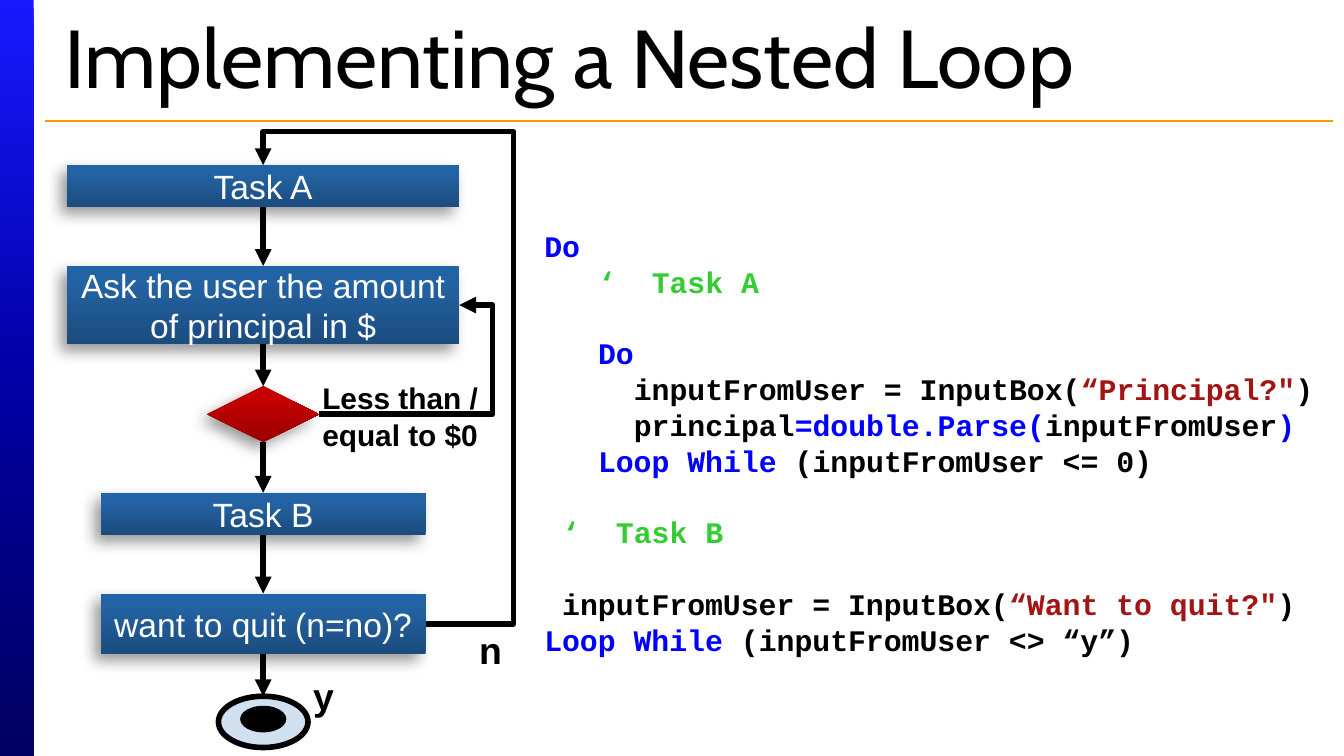
"""Build a slide that pairs a nested loop flowchart with its code."""
from dataclasses import dataclass

from lxml.etree import SubElement
from pptx import Presentation
from pptx.dml.color import RGBColor
from pptx.enum.shapes import MSO_CONNECTOR, MSO_SHAPE
from pptx.enum.text import MSO_ANCHOR, PP_ALIGN
from pptx.oxml import parse_xml
from pptx.oxml.ns import nsdecls, qn
from pptx.util import Pt


@dataclass(frozen=True)
class Theme:
    black: str = "000000"
    white: str = "FFFFFF"
    rule: str = "FF9900"
    pale: str = "D1E0F0"
    keyword: str = "0000FF"
    comment: str = "33CC33"
    string: str = "A31515"
    bar: tuple = ((0, "1919FF"), (50, "0000A5"), (100, "000060"))
    blue: tuple = ((0, "1B4C7E"), (80, "2363A3"), (100, "2063A6"))
    red: tuple = ((0, "980000"), (80, "C60000"), (100, "C70000"))
    sans: str = "Arial"
    heading: str = "Cabin"
    mono: str = "Courier New"
    title_size: int = 44
    box_size: int = 18
    code_size: int = 16
    answer_size: int = 20


def add_gradient(s, stops, angle):
    gs = "".join(f'<a:gs pos="{pos * 1000}"><a:srgbClr val="{color}"/></a:gs>' for pos, color in stops)
    s._element.spPr.insert(2, parse_xml(
        f'<a:gradFill {nsdecls("a")} rotWithShape="1"><a:gsLst>{gs}</a:gsLst>'
        f'<a:lin ang="{angle * 60000}" scaled="0"/></a:gradFill>'))
    s.line.fill.background()
    s.shadow.inherit = False


def add_text(s, text, font, size, color, bold=False, align=PP_ALIGN.LEFT):
    tf = s.text_frame
    tf.word_wrap = True
    p = tf.paragraphs[0]
    p.text = text
    p.alignment = align
    p.font.name, p.font.size, p.font.bold = font, Pt(size), bold
    p.font.color.rgb = RGBColor.from_string(color)
    return tf


theme = Theme()
prs = Presentation()
prs.slide_width, prs.slide_height = Pt(720), Pt(405)
slide = prs.slides.add_slide(prs.slide_layouts[6])
shapes = slide.shapes

bar = shapes.add_shape(MSO_SHAPE.RECTANGLE, 0, 0, Pt(18), Pt(405))
add_gradient(bar, theme.bar, 90)

title = shapes.add_textbox(Pt(27.5), Pt(10.8), Pt(690), Pt(38))
tf = add_text(title, "Implementing a Nested Loop", theme.heading, theme.title_size, theme.black)
tf.vertical_anchor = MSO_ANCHOR.MIDDLE

center = 141
steps = [
    (MSO_SHAPE.FLOWCHART_PROCESS, 88.5, 210, 22.5, theme.blue, "Task A"),
    (MSO_SHAPE.FLOWCHART_PROCESS, 142.5, 210, 42, theme.blue, "Ask the user the amount of principal in $"),
    (MSO_SHAPE.FLOWCHART_DECISION, 207, 60, 30, theme.red, ""),
    (MSO_SHAPE.FLOWCHART_PROCESS, 264, 174, 22.5, theme.blue, "Task B"),
    (MSO_SHAPE.FLOWCHART_PROCESS, 318, 174, 32.5, theme.blue, "want to quit (n=no)?"),
]
for kind, top, width, height, stops, text in steps:
    s = shapes.add_shape(kind, Pt(center - width / 2), Pt(top), Pt(width), Pt(height))
    add_gradient(s, stops, 270)
    s._element.spPr.find(qn("a:effectLst")).append(parse_xml(
        f'<a:outerShdw {nsdecls("a")} blurRad="{Pt(8)}" dist="{Pt(5)}" dir="8100000" rotWithShape="0">'
        f'<a:srgbClr val="{theme.black}"><a:alpha val="40000"/></a:srgbClr></a:outerShdw>'))
    if text:
        tf = add_text(s, text, theme.sans, theme.box_size, theme.white, align=PP_ALIGN.CENTER)
        tf.vertical_anchor = MSO_ANCHOR.MIDDLE
        tf.margin_left = tf.margin_right = tf.margin_top = tf.margin_bottom = Pt(3.6)

for top, width, height, fill, weight in [(373, 48, 27.5, theme.pale, 3), (378.5, 24, 13.5, theme.black, 0.75)]:
    s = shapes.add_shape(MSO_SHAPE.OVAL, Pt(center - width / 2), Pt(top), Pt(width), Pt(height))
    s.shadow.inherit = False
    s.fill.solid()
    s.fill.fore_color.rgb = RGBColor.from_string(fill)
    s.line.color.rgb = RGBColor.from_string(theme.black)
    s.line.width = Pt(weight)

tops = [step[1] for step in steps[1:]] + [373]
bottoms = [step[1] + step[3] for step in steps]
lines = [("line", center, y1, center, y2, ()) for y1, y2 in zip(bottoms, tops)]
lines += [
    ("bentConnector3", 171, 222, 246, 163.5, (123900,)),
    ("bentConnector4", 228, 334.25, center, 88.5, (-54100, 107300)),
    ("rule", 24, 64.8, 714, 64.8, ()),
]
for kind, x1, y1, x2, y2, bends in lines:
    route = MSO_CONNECTOR.ELBOW if bends else MSO_CONNECTOR.STRAIGHT
    s = shapes.add_connector(route, Pt(x1), Pt(y1), Pt(x2), Pt(y2))
    is_rule = kind == "rule"
    s.line.color.rgb = RGBColor.from_string(theme.rule if is_rule else theme.black)
    s.line.width = Pt(0.75 if is_rule else 3)
    spPr = s._element.spPr
    if not is_rule:
        SubElement(spPr.find(qn("a:ln")), qn("a:tailEnd"), type="triangle")
    SubElement(spPr, qn("a:effectLst"))
    if bends:
        geom = spPr.find(qn("a:prstGeom"))
        geom.set("prst", kind)
        for i, bend in enumerate(bends, 1):
            SubElement(geom.find(qn("a:avLst")), qn("a:gd"), name=f"adj{i}", fmla=f"val {bend}")

labels = [
    ("Less than / equal to $0", 165.6, 198.7, 104.4, 46, theme.code_size, PP_ALIGN.LEFT),
    ("n", 228, 331.2, 48, 31.7, theme.answer_size, PP_ALIGN.RIGHT),
    ("y", 138, 355.7, 48, 31.7, theme.answer_size, PP_ALIGN.RIGHT),
]
for text, left, top, width, height, size, align in labels:
    s = shapes.add_textbox(Pt(left), Pt(top), Pt(width), Pt(height))
    tf = add_text(s, text, theme.sans, size, theme.black, True, align)
    tf.paragraphs[0].line_spacing = 1.05

char, line = 9.6, 19.2
K, C, S, B = theme.keyword, theme.comment, theme.string, theme.black
code = [
    (0, 0, [("Do", K)]),
    (3, 0, [("‘\tTask A", C)]),
    (3, 1, [("Do", K)]),
    (5, 0, [("inputFromUser = InputBox(", B), ("“Principal?\"", S), (")", B)]),
    (5, 0, [("principal", B), ("=double.Parse(", K), ("inputFromUser", B), (")", K)]),
    (3, 0, [("Loop While", K), (" (inputFromUser <= 0)", B)]),
    (1, 1, [("‘\tTask B", C)]),
    (1, 1, [("inputFromUser = InputBox(", B), ("“Want to quit?\"", S), (")", B)]),
    (0, 0, [("Loop While", K), (" (inputFromUser <> “y”)", B)]),
]
s = shapes.add_textbox(Pt(291.6), Pt(83.5), Pt(426), Pt(271.5))
tf = s.text_frame
tf.word_wrap = True
tf.margin_left = tf.margin_right = tf.margin_bottom = 0
tf.margin_top = Pt(2 * line)
for i, (indent, gap, runs) in enumerate(code):
    p = tf.add_paragraph() if i else tf.paragraphs[0]
    p.line_spacing, p.space_before = Pt(line), Pt(gap * line)
    p.font.name, p.font.size, p.font.bold = theme.mono, Pt(theme.code_size), True
    hang = 3 if "\t" in runs[0][0] else 0
    pPr = p._p.get_or_add_pPr()
    pPr.set("marL", str(Pt((indent + hang) * char)))
    pPr.set("indent", str(Pt(-hang * char)))
    for text, color in runs:
        r = p.add_run()
        r.text = text
        r.font.color.rgb = RGBColor.from_string(color)

prs.save("out.pptx")
